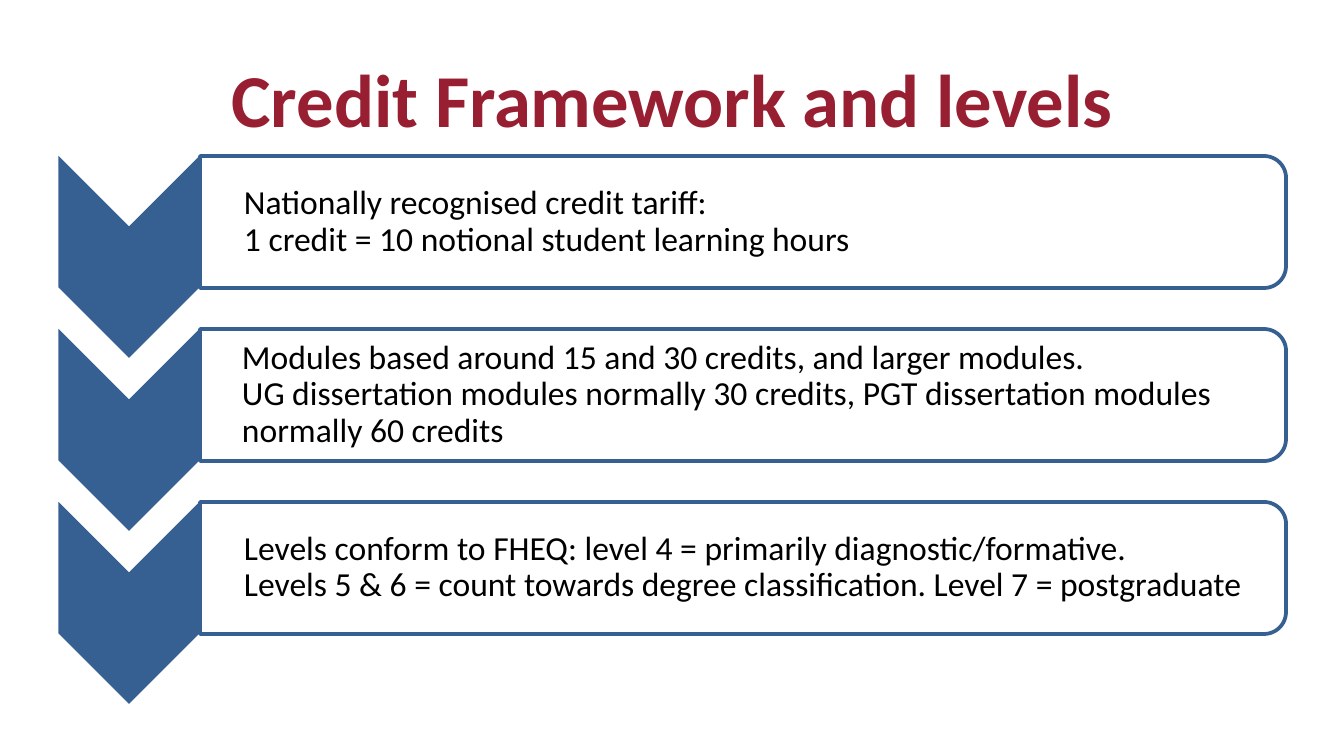
from pptx import Presentation
from pptx.dml.color import RGBColor
from pptx.enum.shapes import MSO_SHAPE as Shape
from pptx.enum.text import MSO_ANCHOR as Anchor, PP_ALIGN as Align
from pptx.util import Emu, Pt

SLIDE_WIDTH, SLIDE_HEIGHT = 1344, 756
BLUE = RGBColor(0x37, 0x60, 0x92)
CRIMSON = RGBColor(0x98, 0x1E, 0x32)
WHITE = RGBColor(0xFF, 0xFF, 0xFF)
BLACK = RGBColor(0, 0, 0)

ROW_CENTER, ROW_PITCH = 222, 173
PANEL_CENTER, PANEL_LENGTH, PANEL_DEPTH = 743, 1086, 132
CHEVRON_CENTER, CHEVRON_LENGTH, CHEVRON_DEPTH, CHEVRON_DROP = 129, 202, 141, 35
TEXT_LEFT, TEXT_WIDTH, TEXT_HEIGHT = 200, 1079, 118

# Left inset of the text in px, then its lines
ROWS = [
    (44, ["Nationally recognised credit tariff: ",
          "1 credit = 10 notional student learning hours"]),
    (42, ["Modules based around 15 and 30 credits, and larger modules. ",
          "UG dissertation modules normally 30 credits, PGT dissertation modules "
          "normally 60 credits"]),
    (44, ["Levels conform to FHEQ: level 4 = primarily diagnostic/formative. ",
          "Levels 5 & 6 = count towards degree classification. Level 7 = postgraduate"]),
]


def px(length):
    return Emu(round(length * 9144000 / SLIDE_WIDTH))


def add_turned(kind, center_x, center_y, width, height, fill):
    """Add a shape that is turned a quarter clockwise about its centre."""
    shape = slide.shapes.add_shape(
        kind, px(center_x - width / 2), px(center_y - height / 2), px(width), px(height))
    shape.rotation = 90
    shape.shadow.inherit = False
    shape.fill.solid()
    shape.fill.fore_color.rgb = fill
    return shape


prs = Presentation()
prs.slide_width, prs.slide_height = px(SLIDE_WIDTH), px(SLIDE_HEIGHT)
slide = prs.slides.add_slide(prs.slide_layouts[6])

title = slide.shapes.add_textbox(px(67), px(35), px(1210), px(126)).text_frame
title.word_wrap = True
title.vertical_anchor = Anchor.MIDDLE
heading = title.paragraphs[0]
heading.alignment = Align.CENTER
heading.font.name = "Calibri"
heading.font.size = Pt(40)
heading.font.bold = True
heading.font.color.rgb = CRIMSON
heading.add_run().text = "Credit Framework and levels"

for row, (inset, lines) in enumerate(ROWS):
    center = ROW_CENTER + row * ROW_PITCH

    chevron = add_turned(Shape.CHEVRON, CHEVRON_CENTER, center + CHEVRON_DROP,
                         CHEVRON_LENGTH, CHEVRON_DEPTH, BLUE)
    chevron.line.fill.background()

    panel = add_turned(Shape.ROUND_2_SAME_RECTANGLE, PANEL_CENTER, center,
                       PANEL_DEPTH, PANEL_LENGTH, WHITE)
    panel.line.color.rgb = BLUE
    panel.line.width = Pt(2)

    statement = slide.shapes.add_textbox(
        px(TEXT_LEFT), px(center - TEXT_HEIGHT / 2), px(TEXT_WIDTH), px(TEXT_HEIGHT)).text_frame
    statement.word_wrap = True
    statement.vertical_anchor = Anchor.MIDDLE
    statement.margin_left = px(inset)
    statement.margin_top = statement.margin_right = statement.margin_bottom = px(1)
    paragraph = statement.paragraphs[0]
    paragraph.line_spacing = 0.9
    paragraph.font.name = "Calibri"
    paragraph.font.size = Pt(18)
    paragraph.font.color.rgb = BLACK
    for number, line in enumerate(lines):
        if number:
            paragraph.add_line_break()
        paragraph.add_run().text = line

prs.save("out.pptx")
